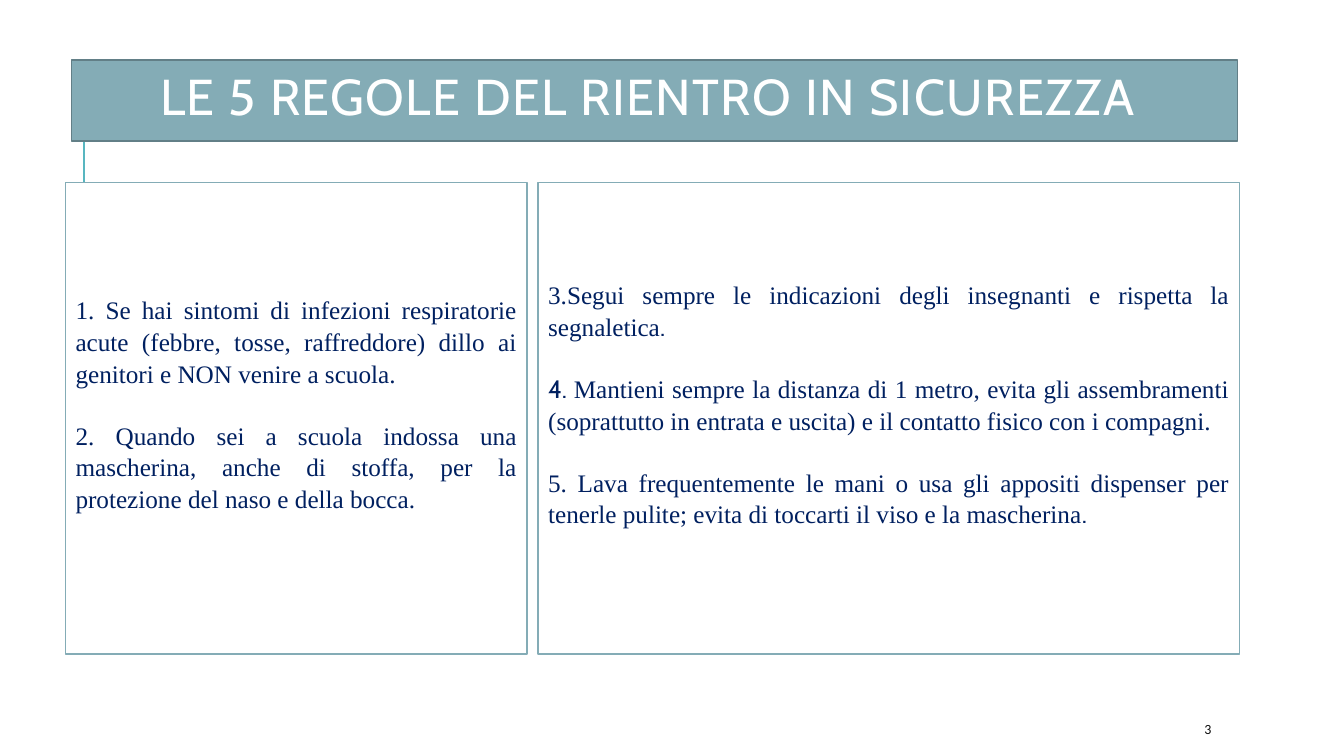
from dataclasses import dataclass
from lxml.etree import SubElement
from pptx import Presentation
from pptx.dml.color import RGBColor
from pptx.enum.shapes import MSO_CONNECTOR
from pptx.enum.text import MSO_ANCHOR, MSO_AUTO_SIZE, PP_ALIGN
from pptx.oxml.ns import qn
from pptx.util import Cm, Pt


@dataclass(frozen=True)
class Theme:
    band: str = "84ACB6"
    edge: str = "627F87"
    rule: str = "58B6C0"
    white: str = "FFFFFF"
    navy: str = "002060"
    dark: str = "0D0D0D"
    sans: str = "Cabin"
    serif: str = "Times New Roman"
    plain: str = "Calibri"
    head: float = 36
    body: float = 18
    small: float = 10
    gap: float = 21.7


theme = Theme()

# Content: each paragraph is a list of (text, font) runs
TITLE = "LE 5 REGOLE DEL RIENTRO IN SICUREZZA "
LEFT = [
    [("1. Se hai sintomi di infezioni respiratorie acute (febbre, tosse, "
      "raffreddore) dillo ai genitori e NON venire a scuola.", theme.serif)],
    [("2. Quando sei a scuola indossa una mascherina, anche di stoffa, "
      "per la protezione del naso e della bocca.", theme.serif)],
]
RIGHT = [
    [("3.Segui sempre le indicazioni degli insegnanti e rispetta la segnaletica",
      theme.serif), (".", theme.sans)],
    [("4. ", theme.sans),
     ("Mantieni sempre la distanza di 1 metro, evita gli assembramenti (soprattutto "
      "in entrata e uscita) e il contatto fisico con i compagni.", theme.serif)],
    [("5. Lava frequentemente le mani o usa gli appositi dispenser per tenerle "
      "pulite; evita di toccarti il viso e la mascherina", theme.serif),
     (".", theme.sans)],
]
PAGE = "3"

# Layout in centimetres
EDGE, TOP, TALL, GAP = 1.65, 4.6, 11.89, 0.28
PANELS = [(LEFT, 11.63), (RIGHT, 17.68)]


def rgb(code):
    return RGBColor.from_string(code)


def assign(item, values):
    for name, value in values.items():
        setattr(item, name, value)


def place(shape, left, top, width, height):
    assign(shape, {"left": Cm(left), "top": Cm(top),
                   "width": Cm(width), "height": Cm(height)})


def paint(shape, fill, line):
    shape.fill.solid()
    shape.fill.fore_color.rgb = rgb(fill)
    shape.line.color.rgb = rgb(line)
    shape.line.width = Pt(1.25)


def frame(shape):
    assign(shape.text_frame, {"word_wrap": True, "auto_size": MSO_AUTO_SIZE.NONE,
                              "vertical_anchor": MSO_ANCHOR.MIDDLE})
    return shape.text_frame


def write(para, text, font, size, color):
    run = para.add_run()
    run.text = text
    assign(run.font, {"name": font, "size": Pt(size)})
    run.font.color.rgb = rgb(color)
    return run


def fill_panel(shape, rules):
    box = frame(shape)
    box.margin_bottom = Cm(0.89)
    for i, rule in enumerate(rules):
        para = box.add_paragraph() if i else box.paragraphs[0]
        props = para._p.get_or_add_pPr()
        props.set("marL", "0")
        props.set("indent", "0")
        SubElement(props, qn("a:buNone"))
        assign(para, {"alignment": PP_ALIGN.JUSTIFY, "line_spacing": 1.05,
                      "space_before": Pt(theme.gap if i else 0)})
        for text, font in rule:
            write(para, text, font, theme.body, theme.navy)


def main():
    deck = Presentation()
    assign(deck, {"slide_width": Cm(33.87), "slide_height": Cm(19.05)})
    slide = deck.slides.add_slide(deck.slide_layouts[3])
    title, *bodies = slide.placeholders

    # Rule behind the title and the left panel
    rule = slide.shapes.add_connector(
        MSO_CONNECTOR.STRAIGHT, Cm(2.11), Cm(4.83), Cm(2.11), Cm(2.29))
    rule.line.color.rgb = rgb(theme.rule)
    rule.line.width = Pt(1.5)
    SubElement(rule._element.spPr, qn("a:effectLst"))
    slide.shapes._spTree.insert(2, rule._element)

    # Title band
    place(title, 1.8, 1.52, 29.39, 2.03)
    paint(title, theme.band, theme.edge)
    para = frame(title).paragraphs[0]
    assign(para, {"alignment": PP_ALIGN.CENTER, "line_spacing": 0.8})
    run = write(para, TITLE, theme.sans, theme.head, theme.white)
    run._r.get_or_add_rPr().set("spc", "100")

    # Two panels of rules
    left = EDGE
    for body, (rules, width) in zip(bodies, PANELS):
        place(body, left, TOP, width, TALL)
        paint(body, theme.white, theme.band)
        fill_panel(body, rules)
        left += width + GAP

    # Page number
    page = slide.shapes.add_textbox(Cm(30.1), Cm(17.98), Cm(2.69), Cm(0.76))
    write(frame(page).paragraphs[0], PAGE, theme.plain, theme.small, theme.dark)

    deck.save("out.pptx")


if __name__ == "__main__":
    main()
